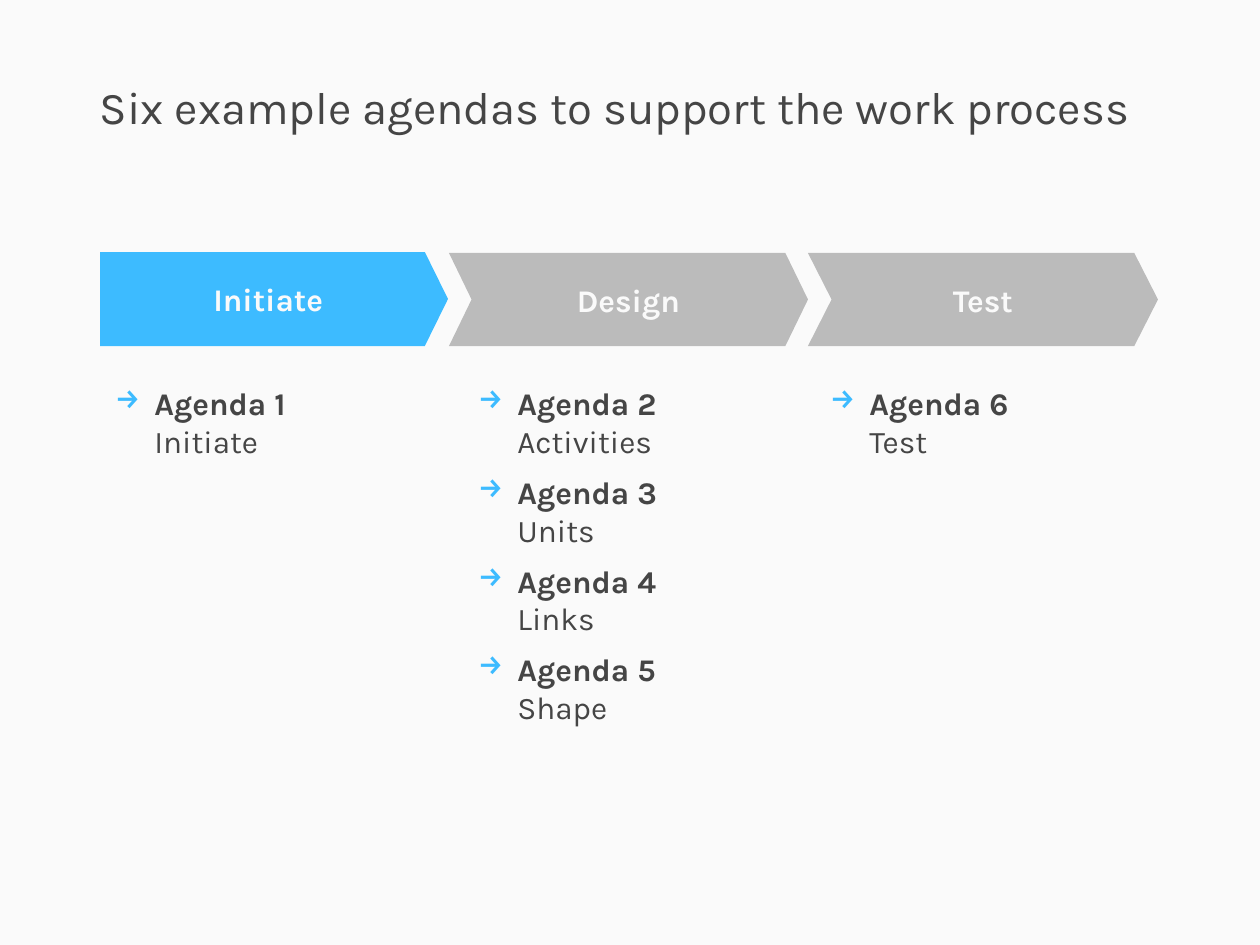
from lxml import etree
from pptx import Presentation
from pptx import util as u
from pptx.dml.color import RGBColor
from pptx.enum import shapes, text
from pptx.oxml.ns import qn

PAPER = RGBColor(0xFA, 0xFA, 0xFA)
INK = RGBColor(0x45, 0x45, 0x45)
BLUE = RGBColor(0x3D, 0xBB, 0xFF)
GREY = RGBColor(0xBB, 0xBB, 0xBB)
PX_PER_INCH = 126
HANGING = 39
PLATE, CHEVRON = shapes.MSO_SHAPE.PENTAGON, shapes.MSO_SHAPE.CHEVRON

# outline, point depth, fill, step box, step name, list left, agendas
STEPS = [
    (PLATE, 0.246, BLUE, (100, 252, 348, 94), "Initiate", 103,
     [("Agenda 1", "Initiate")]),
    (CHEVRON, 0.243, GREY, (449, 253, 359, 93), "Design", 466,
     [("Agenda 2", "Activities"), ("Agenda 3", "Units"),
      ("Agenda 4", "Links"), ("Agenda 5", "Shape")]),
    (CHEVRON, 0.254, GREY, (808, 253, 350, 93), "Test", 818,
     [("Agenda 6", "Test")]),
]


def px(length):
    return u.Emu(round(length * 914400 / PX_PER_INCH))


def write(paragraph, words, size=18, color=INK, bold=False):
    run = paragraph.add_run()
    run.text = words
    run.font.name = "Karla"
    run.font.size = u.Pt(size)
    run.font.bold = bold
    run.font.color.rgb = color


def add_arrow_bullet(paragraph):
    """Hang the paragraph behind a blue arrow."""
    props = paragraph._p.get_or_add_pPr()
    props.set("marL", str(px(HANGING)))
    props.set("indent", str(-px(HANGING)))
    bullet_color = etree.SubElement(props, qn("a:buClr"))
    etree.SubElement(bullet_color, qn("a:srgbClr"), val=str(BLUE))
    etree.SubElement(props, qn("a:buChar"), char="→")


class AgendaSlide:
    def __init__(self, deck):
        self.slide = deck.slides.add_slide(deck.slide_layouts[5])
        background = self.slide.background.fill
        background.solid()
        background.fore_color.rgb = PAPER

    def title(self, words, left, top, width, height):
        title = self.slide.shapes.title
        title.left, title.top = px(left), px(top)
        title.width, title.height = px(width), px(height)
        frame = title.text_frame
        frame.word_wrap = True
        frame.auto_size = text.MSO_AUTO_SIZE.NONE
        frame.vertical_anchor = text.MSO_ANCHOR.TOP
        heading = frame.paragraphs[0]
        heading.alignment = text.PP_ALIGN.LEFT
        heading.line_spacing = 0.9
        write(heading, words, size=26)

    def step(self, outline, depth, fill, box, name):
        arrow = self.slide.shapes.add_shape(outline, *map(px, box))
        arrow.adjustments[0] = depth
        arrow.shadow.inherit = False
        arrow.fill.solid()
        arrow.fill.fore_color.rgb = fill
        arrow.line.fill.background()
        frame = arrow.text_frame
        frame.vertical_anchor = text.MSO_ANCHOR.MIDDLE
        label = frame.paragraphs[0]
        label.alignment = text.PP_ALIGN.CENTER
        write(label, name, color=PAPER, bold=True)

    def agenda_list(self, left, agendas):
        height = 89 * len(agendas)
        box = self.slide.shapes.add_textbox(px(left), px(378), px(315), px(height))
        frame = box.text_frame
        frame.word_wrap = True
        frame.auto_size = text.MSO_AUTO_SIZE.SHAPE_TO_FIT_TEXT
        for index, (agenda, topic) in enumerate(agendas):
            entry = frame.add_paragraph() if index else frame.paragraphs[0]
            add_arrow_bullet(entry)
            if index:
                entry.space_before = u.Pt(7.5)
            write(entry, agenda, bold=True)
            entry.add_line_break()
            write(entry, topic)


def main():
    deck = Presentation()
    deck.slide_width, deck.slide_height = u.Inches(10), u.Inches(7.5)
    page = AgendaSlide(deck)
    page.title("Six example agendas to support the work process", 87, 79, 1086, 155)
    for outline, depth, fill, box, name, list_left, agendas in STEPS:
        page.step(outline, depth, fill, box, name)
        page.agenda_list(list_left, agendas)
    deck.save("out.pptx")


if __name__ == "__main__":
    main()
